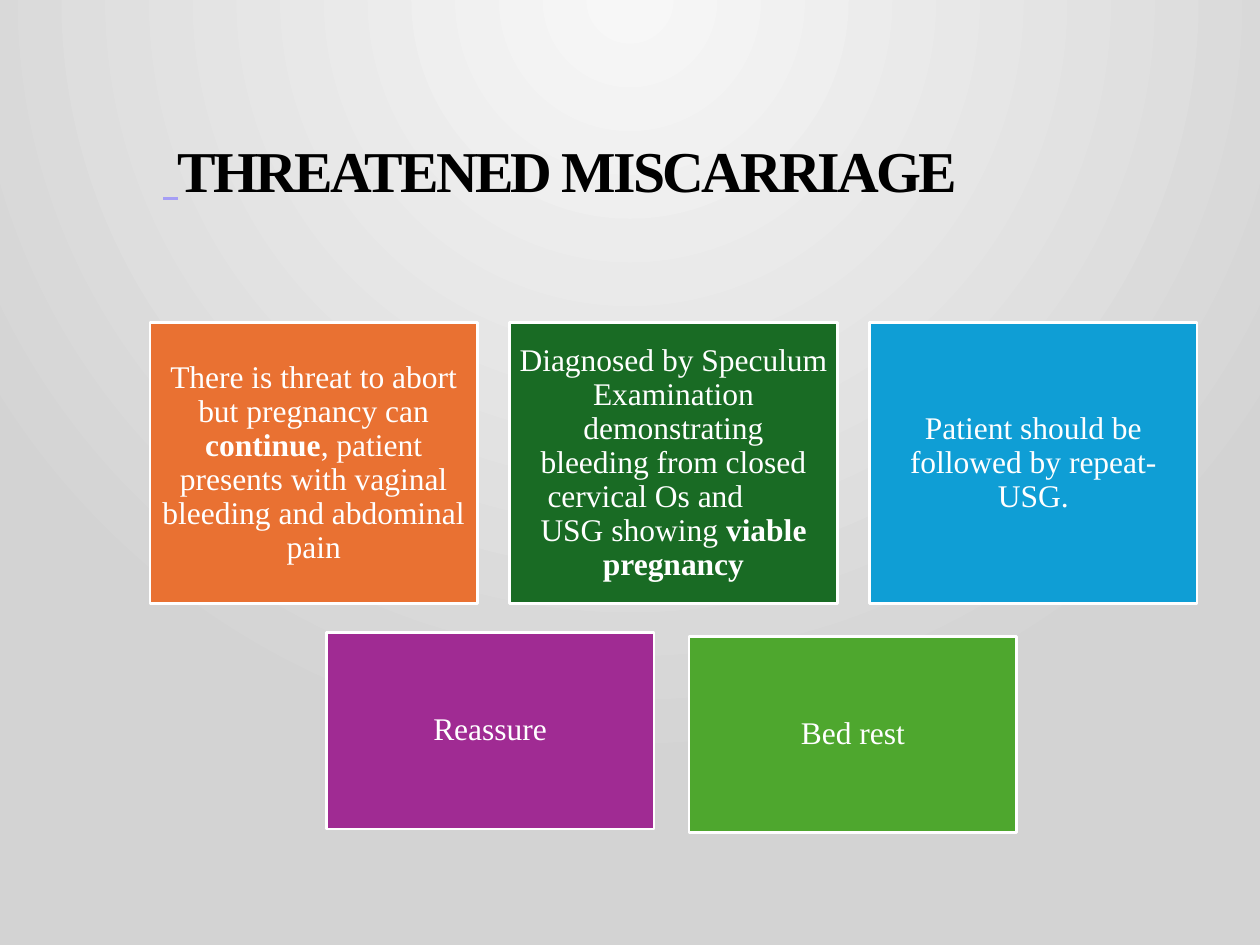
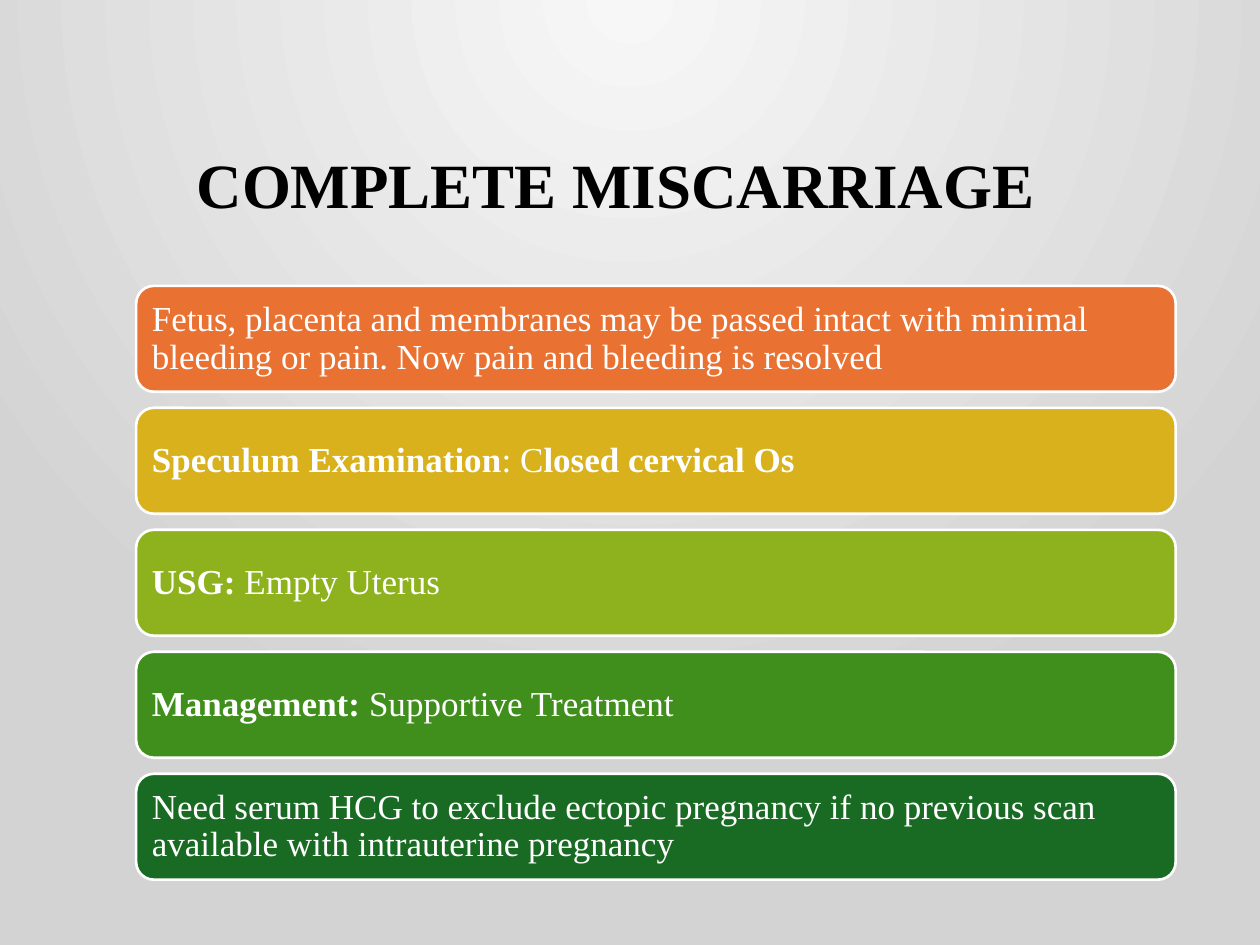
from dataclasses import dataclass

from lxml.etree import SubElement
from pptx import Presentation
from pptx.dml.color import RGBColor
from pptx.enum.shapes import MSO_SHAPE
from pptx.enum.text import MSO_ANCHOR, MSO_AUTO_SIZE, PP_ALIGN
from pptx.oxml.ns import qn
from pptx.presentation import Presentation as Deck
from pptx.slide import Slide
from pptx.text.text import TextFrame
from pptx.util import Pt


@dataclass(frozen=True)
class Theme:
    font: str = "Times New Roman"
    text: str = "FFFFFF"
    title: str = "000000"
    accent: str = "A59EF5"
    glow: str = "F7F7F7"
    edge: str = "D3D3D3"
    orange: str = "E97132"
    dark_green: str = "196B24"
    blue: str = "0F9ED5"
    purple: str = "A02B93"
    green: str = "4EA72E"
    gold: str = "D8B11D"
    lime: str = "8EB21E"
    leaf: str = "408E1C"
    tight_title_size: float = 33
    title_size: float = 36
    card_size: float = 18
    bar_size: float = 20
    line_width: float = 1.5
    line_spacing: float = 0.9


THEME = Theme()


@dataclass(frozen=True)
class Span:
    text: str
    bold: bool = False
    color: str | None = None
    underline: bool = False
    break_after: bool = False


@dataclass(frozen=True)
class Box:
    left: float
    top: float
    width: float
    height: float


@dataclass(frozen=True)
class BlockStyle:
    preset: MSO_SHAPE
    size: float
    inset: float
    align: PP_ALIGN


@dataclass(frozen=True)
class Block:
    fill: str
    spans: tuple[Span, ...]


CARD = BlockStyle(MSO_SHAPE.RECTANGLE, THEME.card_size, 5, PP_ALIGN.CENTER)
BAR = BlockStyle(MSO_SHAPE.ROUNDED_RECTANGLE, THEME.bar_size, 6, PP_ALIGN.LEFT)

CARD_WIDTH, CARD_GAP = 187.2, 18.4
TOP_CARD_BOXES = [
    Box(85.7 + i * (CARD_WIDTH + CARD_GAP), 184.3, CARD_WIDTH, 160.6) for i in range(3)
]
LOWER_CARD_BOXES = [
    Box(186.5, 361.4, CARD_WIDTH, 112.3),
    Box(393.8, 363.6, CARD_WIDTH, 112.3),
]
BAR_HEIGHT, BAR_GAP = 60.5, 9.2
BAR_BOXES = [
    Box(77.8, 163.4 + i * (BAR_HEIGHT + BAR_GAP), 594, BAR_HEIGHT) for i in range(5)
]

THREATENED_CARDS = [
    Block(THEME.orange, (
        Span("There is threat to abort but pregnancy can "),
        Span("continue", bold=True),
        Span(", patient presents with vaginal bleeding and abdominal pain"),
    )),
    Block(THEME.dark_green, (
        Span("Diagnosed by Speculum Examination demonstrating", break_after=True),
        Span("bleeding from closed cervical Os and\tUSG showing "),
        Span("viable pregnancy", bold=True),
    )),
    Block(THEME.blue, (Span("Patient should be followed by repeat-USG."),)),
    Block(THEME.purple, (Span("Reassure"),)),
    Block(THEME.green, (Span("Bed rest"),)),
]

COMPLETE_BARS = [
    Block(THEME.orange, (
        Span("Fetus, placenta and membranes may be passed intact with minimal "
             "bleeding or pain. Now pain and bleeding is resolved"),
    )),
    Block(THEME.gold, (
        Span("Speculum Examination", bold=True),
        Span(": C"),
        Span("losed cervical Os", bold=True),
    )),
    Block(THEME.lime, (Span("USG: ", bold=True), Span("Empty Uterus"))),
    Block(THEME.leaf, (Span("Management: ", bold=True), Span("Supportive Treatment"))),
    Block(THEME.dark_green, (
        Span("Need serum HCG to exclude ectopic pregnancy if no previous scan "
             "available with intrauterine pregnancy"),
    )),
]


def set_background(prs: Deck) -> None:
    master = prs.slide_master
    fill = master.background.fill
    fill.gradient()
    for stop, color, position in zip(fill.gradient_stops, (THEME.glow, THEME.edge), (0, 1)):
        stop.color.rgb = RGBColor.from_string(color)
        stop.position = position
    grad = master.element.find(".//" + qn("a:gradFill"))
    grad.remove(grad.find(qn("a:lin")))
    radial = SubElement(grad, qn("a:path"), path="circle")
    SubElement(radial, qn("a:fillToRect"), l="43000", t="0", r="43000", b="100000")


def write_text(tf: TextFrame, spans: tuple[Span, ...], size: float, color: str,
               align: PP_ALIGN) -> None:
    tf.word_wrap = True
    tf.auto_size = MSO_AUTO_SIZE.NONE
    p = tf.paragraphs[0]
    p.alignment = align
    p.line_spacing = THEME.line_spacing
    p.font.name = THEME.font
    p.font.size = Pt(size)
    p.font.color.rgb = RGBColor.from_string(color)
    for span in spans:
        r = p.add_run()
        r.text = span.text
        r.font.bold = span.bold
        if span.color:
            r.font.color.rgb = RGBColor.from_string(span.color)
        if span.underline:
            r.font.underline = True
        if span.break_after:
            p.add_line_break()


def add_titled_slide(prs: Deck, spans: tuple[Span, ...], box: Box, size: float,
                     anchor: MSO_ANCHOR, tracking: float = 0) -> Slide:
    s = prs.slides.add_slide(prs.slide_layouts[5])
    sp = s.shapes.title
    sp.left, sp.top = Pt(box.left), Pt(box.top)
    sp.width, sp.height = Pt(box.width), Pt(box.height)
    sp.text_frame.vertical_anchor = anchor
    write_text(sp.text_frame, spans, size, THEME.title, PP_ALIGN.LEFT)
    if tracking:
        for props in sp.element.iter(qn("a:rPr")):
            props.set("spc", str(round(tracking * 100)))
    return s


def add_block(s: Slide, block: Block, box: Box, style: BlockStyle) -> None:
    sp = s.shapes.add_shape(style.preset, Pt(box.left), Pt(box.top),
                            Pt(box.width), Pt(box.height))
    sp.shadow.inherit = False
    sp.fill.solid()
    sp.fill.fore_color.rgb = RGBColor.from_string(block.fill)
    sp.line.color.rgb = RGBColor.from_string(THEME.text)
    sp.line.width = Pt(THEME.line_width)
    tf = sp.text_frame
    tf.margin_left = tf.margin_right = tf.margin_top = tf.margin_bottom = Pt(style.inset)
    tf.vertical_anchor = MSO_ANCHOR.MIDDLE
    write_text(tf, block.spans, style.size, THEME.text, style.align)


def add_blocks(s: Slide, blocks: list[Block], boxes: list[Box], style: BlockStyle) -> None:
    for block, box in zip(blocks, boxes):
        add_block(s, block, box, style)


def main() -> None:
    prs = Presentation()
    prs.slide_width, prs.slide_height = Pt(720), Pt(540)
    set_background(prs)

    threatened = add_titled_slide(
        prs,
        (Span(" ", color=THEME.accent, underline=True),
         Span("THREATENED MISCARRIAGE", bold=True)),
        Box(86.2, 77.8, 567.4, 82.8), THEME.tight_title_size, MSO_ANCHOR.TOP, tracking=-1.6,
    )
    add_blocks(threatened, THREATENED_CARDS, TOP_CARD_BOXES + LOWER_CARD_BOXES, CARD)

    complete = add_titled_slide(
        prs, (Span("COMPLETE MISCARRIAGE", bold=True),),
        Box(105.1, 77.8, 567.4, 59.8), THEME.title_size, MSO_ANCHOR.MIDDLE,
    )
    add_blocks(complete, COMPLETE_BARS, BAR_BOXES, BAR)

    prs.save("out.pptx")


if __name__ == "__main__":
    main()
